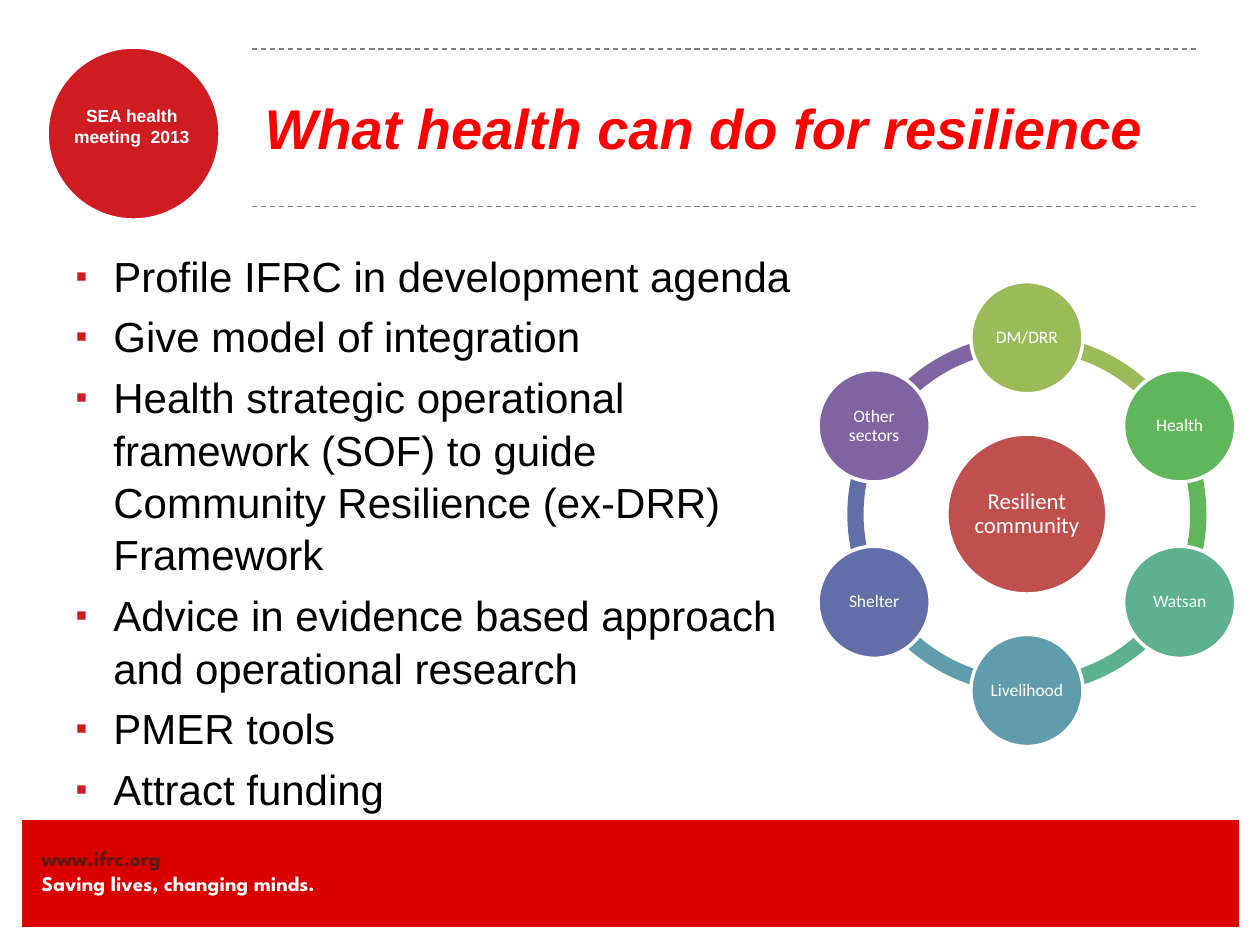
import math
from dataclasses import dataclass

from lxml import etree
from pptx import Presentation
from pptx.dml.color import RGBColor
from pptx.enum.dml import MSO_LINE
from pptx.enum.shapes import MSO_CONNECTOR, MSO_SHAPE
from pptx.enum.text import MSO_ANCHOR, MSO_AUTO_SIZE, PP_ALIGN
from pptx.oxml.ns import qn
from pptx.util import Inches, Pt

RECT, OVAL, ARC = MSO_SHAPE.RECTANGLE, MSO_SHAPE.OVAL, MSO_SHAPE.BLOCK_ARC
STRAIGHT, DASH = MSO_CONNECTOR.STRAIGHT, MSO_LINE.DASH
TOP, MIDDLE = MSO_ANCHOR.TOP, MSO_ANCHOR.MIDDLE
LEFT, CENTER = PP_ALIGN.LEFT, PP_ALIGN.CENTER
NO_FIT = MSO_AUTO_SIZE.NONE


@dataclass(frozen=True)
class Theme:
    """Colours, fonts and type sizes of the slide."""
    white: str = "FFFFFF"
    black: str = "000000"
    footer: str = "DB0000"
    web: str = "551C15"
    accent: str = "CF1C21"
    title: str = "FF0000"
    rule: str = "808080"
    hub: str = "C0504D"
    main_font: str = "Arial"
    diagram_font: str = "Calibri"
    footer_font: str = "League Spartan"
    title_size: int = 32
    body_size: int = 24
    hub_size: int = 13
    footer_size: int = 12
    small_size: int = 10


T = Theme()

BULLETS = [
    "Profile IFRC in development agenda",
    "Give model of integration",
    "Health strategic operational framework (SOF) to guide "
    "Community Resilience (ex-DRR) Framework",
    "Advice in evidence based approach and operational research",
    "PMER tools",
    "Attract funding",
]

SECTORS = [
    ("DM/DRR", "9BBB59"),
    ("Health", "5FB65B"),
    ("Watsan", "5DB18E"),
    ("Livelihood", "5F9DAC"),
    ("Shelter", "626EA7"),
    ("Other sectors", "8064A2"),
]


def place(sp, x, y, w, h):
    """Move and size a shape, in inches."""
    sp.left, sp.top, sp.width, sp.height = (Inches(v) for v in (x, y, w, h))


def add_filled(s, kind, box, fill, line_width=0):
    """Add a flat preset shape with an optional white outline."""
    sp = s.shapes.add_shape(kind, *(Inches(v) for v in box))
    sp.shadow.inherit = False
    sp.fill.solid()
    sp.fill.fore_color.rgb = RGBColor.from_string(fill)
    if line_width:
        sp.line.color.rgb = RGBColor.from_string(T.white)
        sp.line.width = Pt(line_width)
    else:
        sp.line.fill.background()
    return sp


def set_frame(tf, inset, anchor):
    """Set wrapping, equal insets and vertical anchor of a text frame."""
    tf.word_wrap = True
    tf.auto_size = NO_FIT
    tf.vertical_anchor = anchor
    tf.margin_left = tf.margin_right = Inches(inset)
    tf.margin_top = tf.margin_bottom = Inches(inset)


def add_run(p, text, font, size, color, bold=False, italic=False):
    """Append a formatted run to a paragraph."""
    r = p.add_run()
    r.text = text
    r.font.name, r.font.size = font, Pt(size)
    r.font.bold, r.font.italic = bold, italic
    r.font.color.rgb = RGBColor.from_string(color)


def add_label(s, box):
    """Add a text box without insets and return its text frame."""
    tf = s.shapes.add_textbox(*(Inches(v) for v in box)).text_frame
    set_frame(tf, 0, TOP)
    return tf


def add_rule(s, y):
    """Add a dashed horizontal rule around the title."""
    line = s.shapes.add_connector(
        STRAIGHT, Inches(2), Inches(y), Inches(9.5), Inches(y))
    line.line.color.rgb = RGBColor.from_string(T.rule)
    line.line.width = Pt(0.75)
    line.line.dash_style = DASH
    etree.SubElement(line._element.spPr, qn("a:effectLst"))


def add_disc(s, cx, cy, diameter, fill, text, size, inset):
    """Add a labelled circle centred on a point."""
    box = (cx - diameter / 2, cy - diameter / 2, diameter, diameter)
    tf = add_filled(s, OVAL, box, fill, 2).text_frame
    set_frame(tf, inset, MIDDLE)
    p = tf.paragraphs[0]
    p.alignment, p.line_spacing = CENTER, 0.9
    add_run(p, text, T.diagram_font, size, T.white)


def add_cycle(s, cx, cy):
    """Draw the ring of sectors around the resilient community."""
    ring, orbit, step, turn = 2.85, 1.4, 36, 216
    for i, (_, color) in enumerate(SECTORS):
        box = (cx - ring / 2, cy - ring / 2, ring, ring)
        adj = add_filled(s, ARC, box, color).adjustments
        start = 162 + step * i
        adj[0], adj[1], adj[2] = start % turn, (start + step) % turn, 0.045
    add_disc(s, cx, cy, 1.27, T.hub, "Resilient community", T.hub_size, 0.02)
    for i, (name, color) in enumerate(SECTORS):
        a = math.tau * i / len(SECTORS)
        x, y = cx + orbit * math.sin(a), cy - orbit * math.cos(a)
        add_disc(s, x, y, 0.89, color, name, T.small_size, 0.01)


def set_bullet(p):
    """Give a paragraph a small red square bullet with a hanging indent."""
    pPr = p._p.get_or_add_pPr()
    pPr.set("marL", str(Inches(0.3)))
    pPr.set("indent", str(-Inches(0.3)))
    clr = etree.SubElement(pPr, qn("a:buClr"))
    etree.SubElement(clr, qn("a:srgbClr"), val=T.accent)
    etree.SubElement(pPr, qn("a:buSzPct"), val="80000")
    etree.SubElement(pPr, qn("a:buFont"), typeface=T.main_font)
    etree.SubElement(pPr, qn("a:buChar"), char="▪")


def add_footer(s):
    """Draw the red band with the web address and motto."""
    add_filled(s, RECT, (0.17, 6.5, 9.67, 0.86), T.footer, 0.75)
    tf = add_label(s, (0.33, 6.71, 3.42, 0.4))
    lines = [("www.ifrc.org", T.web), ("Saving lives, changing minds.", T.white)]
    for i, (text, color) in enumerate(lines):
        p = tf.add_paragraph() if i else tf.paragraphs[0]
        add_run(p, text, T.footer_font, T.footer_size, color, bold=True)


def add_badge(s):
    """Draw the round meeting badge."""
    add_filled(s, OVAL, (0.37, 0.37, 1.38, 1.38), T.accent, 2.5)
    p = add_label(s, (0.42, 0.83, 1.25, 0.34)).paragraphs[0]
    p.alignment = CENTER
    add_run(p, "SEA health meeting  2013", T.main_font, T.small_size, T.white, bold=True)


def fill_title(sp):
    """Place and write the slide title."""
    place(sp, 2, 0.38, 7.5, 1.25)
    tf = sp.text_frame
    tf.auto_size, tf.vertical_anchor = NO_FIT, MIDDLE
    p = tf.paragraphs[0]
    p.alignment = LEFT
    add_run(p, "What health can do for resilience", T.main_font,
            T.title_size, T.title, bold=True, italic=True)


def fill_body(sp):
    """Place and write the bullet list."""
    place(sp, 0.5, 1.92, 6.08, 4.58)
    tf = sp.text_frame
    tf.auto_size, tf.vertical_anchor = NO_FIT, TOP
    for i, text in enumerate(BULLETS):
        p = tf.add_paragraph() if i else tf.paragraphs[0]
        set_bullet(p)
        p.line_spacing = 1.04
        p.space_before = Pt(4.8 if i else 0)
        add_run(p, text, T.main_font, T.body_size, T.black)


def main():
    """Build and save the slide."""
    prs = Presentation()
    prs.slide_width, prs.slide_height = Inches(10), Inches(7.5)
    s = prs.slides.add_slide(prs.slide_layouts[1])
    add_footer(s)
    add_badge(s)
    for y in (0.39, 1.64):
        add_rule(s, y)
    add_cycle(s, 8.15, 4.08)
    fill_title(s.shapes.title)
    fill_body(s.placeholders[1])
    prs.save("out.pptx")


if __name__ == "__main__":
    main()
